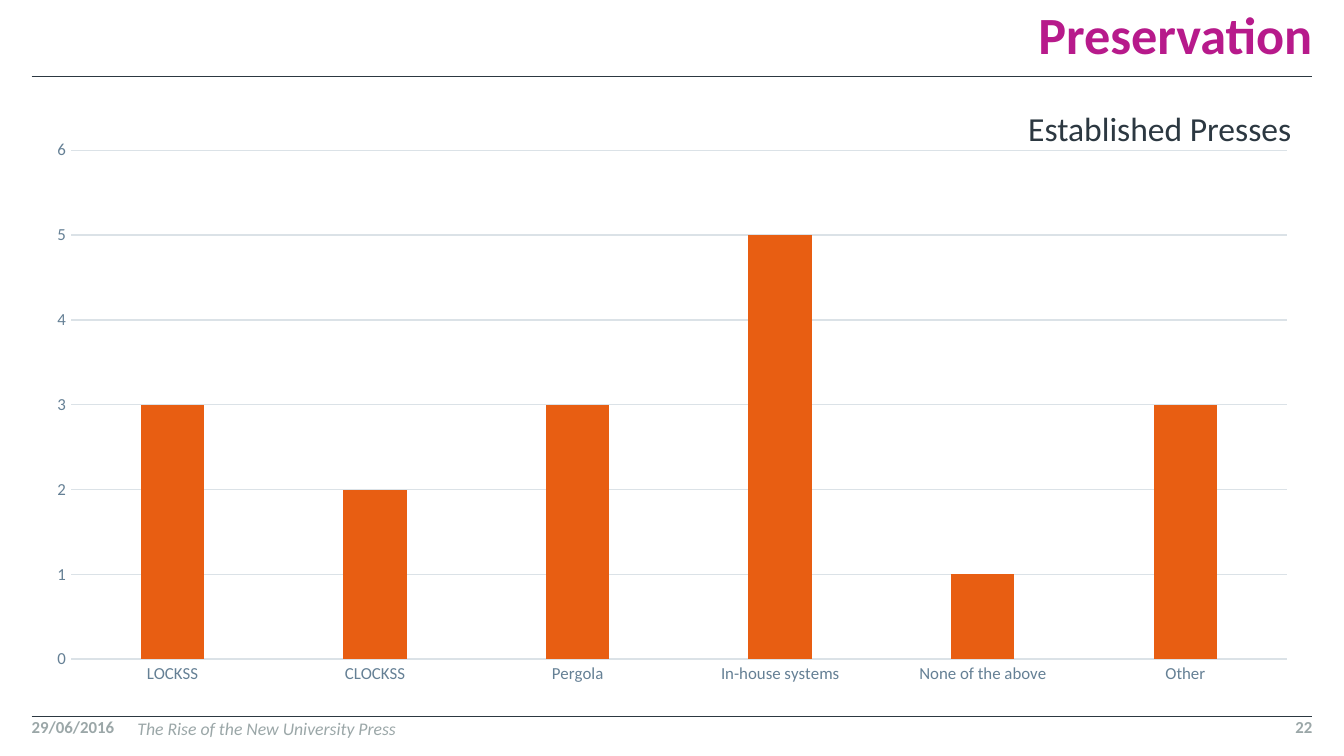
import pptx
import pptx.chart.data
import pptx.dml.color
import pptx.enum.chart
import pptx.enum.shapes
import pptx.enum.text
import pptx.oxml.ns
import pptx.util
from dataclasses import dataclass
from lxml import etree

Pt = pptx.util.Pt
Align = pptx.enum.text.PP_ALIGN
Anchor = pptx.enum.text.MSO_ANCHOR
Tick = pptx.enum.chart.XL_TICK_MARK

WIDE = pptx.util.Inches(10)
HIGH = WIDE * 9 // 16
COLS = ROWS = 100
LEFT, RIGHT = 2.36, 97.64
TOP_RULE, FOOT_RULE = 10.13, 94.75


@dataclass(frozen=True)
class Theme:
    font: str = "Calibri"
    dark: str = "2C3841"
    pink: str = "B71A8B"
    gray: str = "9BA7A8"
    slate: str = "658095"
    grid: str = "DBE2E7"
    fill: str = "E85E12"
    title: float = 28
    label: float = 18
    chart: float = 10
    small: float = 9
    note: float = 9.5


THEME = Theme()


def color(code):
    return pptx.dml.color.RGBColor.from_string(code)


def across(cols):
    return round(WIDE * cols / COLS)


def down(rows):
    return round(HIGH * rows / ROWS)


def style(font, size, code, bold=False, slant=False):
    font.name = THEME.font
    font.size = Pt(size)
    font.bold = bold
    font.italic = slant
    font.color.rgb = color(code)


def add_rule(slide, y):
    rule = slide.shapes.add_connector(
        pptx.enum.shapes.MSO_CONNECTOR.STRAIGHT,
        across(LEFT), down(y), across(RIGHT), down(y))
    rule.line.color.rgb = color(THEME.dark)
    rule.line.width = Pt(0.5)
    etree.SubElement(rule._element.spPr, pptx.oxml.ns.qn("a:effectLst"))


def add_text(slide, text, x, y, w, h, size, code, bold=False, slant=False,
             align=Align.LEFT, anchor=Anchor.TOP, pad=(0, 0), space=1, wrap=True):
    box = slide.shapes.add_textbox(across(x), down(y), across(w), down(h))
    frame = box.text_frame
    frame.text = text
    frame.word_wrap = wrap
    frame.vertical_anchor = anchor
    frame.margin_left = frame.margin_right = pptx.util.Inches(pad[0])
    frame.margin_top = frame.margin_bottom = pptx.util.Inches(pad[1])
    line = frame.paragraphs[0]
    line.alignment = align
    line.line_spacing = space
    style(line.runs[0].font, size, code, bold, slant)


def set_axis(axis):
    axis.major_tick_mark = axis.minor_tick_mark = Tick.NONE
    style(axis.tick_labels.font, THEME.small, THEME.slate)


def set_line(line):
    line.color.rgb = color(THEME.grid)
    line.width = Pt(0.75)


def add_bars(slide, names, counts, x, y, w, h):
    data = pptx.chart.data.CategoryChartData(number_format="General")
    data.categories = names
    data.add_series("Series 1", counts)
    chart = slide.shapes.add_chart(
        pptx.enum.chart.XL_CHART_TYPE.COLUMN_CLUSTERED,
        across(x), down(y), across(w), down(h), data).chart
    chart.has_title = chart.has_legend = False
    style(chart.font, THEME.chart, THEME.dark)

    plot = chart.plots[0]
    plot.gap_width, plot.overlap = 219, -27
    plot.vary_by_categories = False
    bars = plot.series[0].format.fill
    bars.solid()
    bars.fore_color.rgb = color(THEME.fill)

    base, scale = chart.category_axis, chart.value_axis
    set_axis(base)
    set_line(base.format.line)
    set_axis(scale)
    scale.format.line.fill.background()
    scale.has_major_gridlines = True
    set_line(scale.major_gridlines.format.line)


def add_foot(slide):
    side, tall = 7.87, 3.2
    add_text(slide, "29/06/2016", LEFT, FOOT_RULE, side, tall,
             THEME.small, THEME.gray, bold=True)
    add_text(slide, "The Rise of the New University Press",
             LEFT + side, FOOT_RULE, RIGHT - LEFT - 2 * side, tall,
             THEME.note, THEME.gray, slant=True, pad=(0, 0.01))
    add_text(slide, "22", RIGHT - side, FOOT_RULE, side, tall,
             THEME.small, THEME.gray, bold=True, align=Align.RIGHT)


def main():
    deck = pptx.Presentation()
    deck.slide_width, deck.slide_height = WIDE, HIGH
    slide = deck.slides.add_slide(deck.slide_layouts[6])

    for y in (TOP_RULE, FOOT_RULE):
        add_rule(slide, y)
    add_text(slide, "Preservation", 30.3, 0, RIGHT - 30.3, 8.7,
             THEME.title, THEME.pink, bold=True, align=Align.RIGHT,
             anchor=Anchor.BOTTOM, space=0.9)
    add_foot(slide)
    names = ["LOCKSS", "CLOCKSS", "Pergola", "In-house systems",
             "None of the above", "Other"]
    add_bars(slide, names, [3, 2, 3, 5, 1, 3],
             LEFT, 17.1, RIGHT - LEFT, 74.9)
    add_text(slide, "Established Presses", 75.7, 13.7, 22, 6.8,
             THEME.label, THEME.dark, anchor=Anchor.MIDDLE,
             pad=(0.08, 0.04), space=0.99, wrap=False)
    deck.save("out.pptx")


if __name__ == "__main__":
    main()
